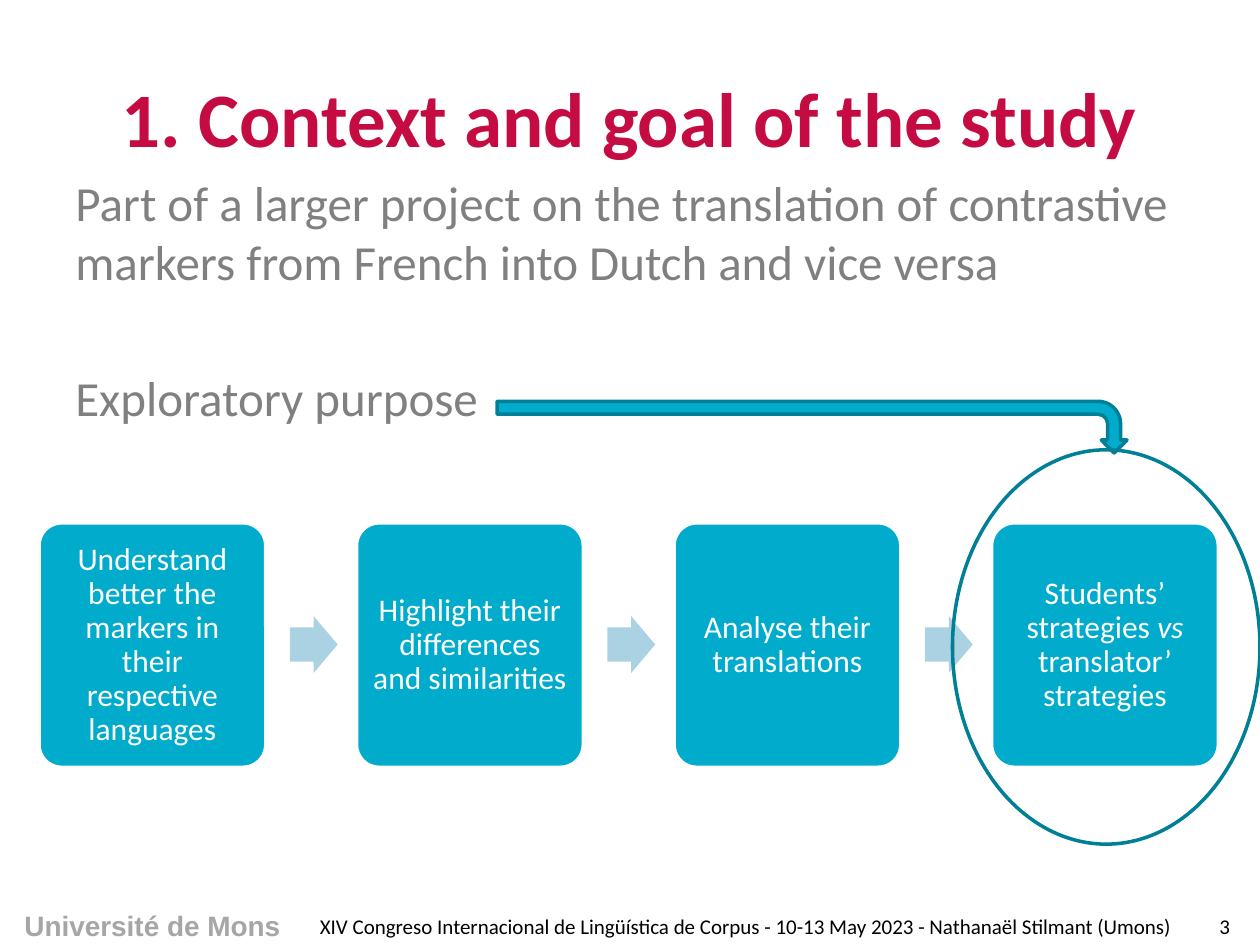
from dataclasses import dataclass

from pptx import Presentation
from pptx.dml.color import RGBColor
from pptx.enum.shapes import MSO_SHAPE
from pptx.enum.text import MSO_ANCHOR, PP_ALIGN
from pptx.util import Inches, Pt

ROUNDED = MSO_SHAPE.ROUNDED_RECTANGLE
RIGHT_ARROW = MSO_SHAPE.RIGHT_ARROW
BENT_ARROW = MSO_SHAPE.BENT_ARROW
OVAL = MSO_SHAPE.OVAL
TOP, MIDDLE = MSO_ANCHOR.TOP, MSO_ANCHOR.MIDDLE
LEFT, CENTER = PP_ALIGN.LEFT, PP_ALIGN.CENTER


@dataclass(frozen=True)
class Theme:
    font: str = "Calibri"
    brand_font: str = "Arial"
    title: str = "C40C42"
    body: str = "808080"
    brand: str = "A6A6A6"
    footer: str = "000000"
    white: str = "FFFFFF"
    step: str = "00ABCC"
    step_arrow: str = "ABD2E2"
    outline: str = "007F97"
    title_size: int = 44
    body_size: int = 28
    step_size: int = 18
    brand_size: int = 16
    footer_size: int = 12
    line_width: int = 2


THEME = Theme()


@dataclass(frozen=True)
class Box:
    left: float
    top: float
    width: float
    height: float


@dataclass(frozen=True)
class Run:
    text: str
    italic: bool = False


@dataclass(frozen=True)
class TextStyle:
    size: int
    color: str
    font: str = THEME.font
    bold: bool = False
    align: PP_ALIGN = LEFT
    anchor: MSO_ANCHOR = MIDDLE


@dataclass(frozen=True)
class Label:
    box: Box
    style: TextStyle
    paragraphs: tuple[str, ...]
    gap: int = 0


TITLE = TextStyle(THEME.title_size, THEME.title, bold=True, align=CENTER)
BODY = TextStyle(THEME.body_size, THEME.body, anchor=TOP)
BRAND = TextStyle(THEME.brand_size, THEME.brand, THEME.brand_font, True, CENTER, TOP)
FOOTER = TextStyle(THEME.footer_size, THEME.footer)
PAGE = TextStyle(THEME.footer_size, THEME.footer, align=CENTER)
STEP = TextStyle(THEME.step_size, THEME.white, align=CENTER)

LABELS = (
    Label(Box(-0.01, 7.16, 2.44, 0.37), BRAND, ("Université de Mons",)),
    Label(Box(0.5, 1.32, 9, 5.68), BODY, (
        "Part of a larger project on the translation of contrastive markers "
        "from French into Dutch and vice versa",
        "Exploratory purpose",
    ), gap=44),
    Label(Box(0.5, 0.3, 9, 1.25), TITLE, ("1. Context and goal of the study",)),
    Label(Box(9.44, 7.2, 0.56, 0.3), PAGE, ("3",)),
    Label(Box(2.44, 7.2, 7, 0.3), FOOTER, (
        "XIV Congreso Internacional de Lingüística de Corpus - 10-13 May 2023 "
        "- Nathanaël Stilmant (Umons)",
    )),
)

STEPS = (
    (Run("Understand better the markers in their respective languages"),),
    (Run("Highlight their differences and similarities"),),
    (Run("Analyse their translations"),),
    (Run("Students’ strategies "), Run("vs", italic=True), Run(" translator’ strategies")),
)
FIRST_STEP = Box(0.31, 4.15, 1.8, 1.94)
STEP_PITCH = 2.52
FIRST_ARROW = Box(2.3, 4.89, 0.38, 0.45)
STEP_INSET = 0.07


def add_run(paragraph, run: Run, style: TextStyle) -> None:
    piece = paragraph.add_run()
    piece.text = run.text
    font = piece.font
    font.name, font.size = style.font, Pt(style.size)
    font.bold, font.italic = style.bold, run.italic
    font.color.rgb = RGBColor.from_string(style.color)


def add_label(slide, label: Label) -> None:
    box = label.box
    frame = slide.shapes.add_textbox(
        Inches(box.left), Inches(box.top), Inches(box.width), Inches(box.height)
    ).text_frame
    frame.word_wrap = True
    frame.vertical_anchor = label.style.anchor
    for index, text in enumerate(label.paragraphs):
        paragraph = frame.add_paragraph() if index else frame.paragraphs[0]
        paragraph.alignment = label.style.align
        if index:
            paragraph.space_before = Pt(label.gap)
        add_run(paragraph, Run(text), label.style)


def add_figure(slide, kind: MSO_SHAPE, box: Box, fill: str | None = None,
               line: str | None = None):
    figure = slide.shapes.add_shape(
        kind, Inches(box.left), Inches(box.top), Inches(box.width), Inches(box.height)
    )
    figure.shadow.inherit = False
    if fill:
        figure.fill.solid()
        figure.fill.fore_color.rgb = RGBColor.from_string(fill)
    else:
        figure.fill.background()
    if line:
        figure.line.color.rgb = RGBColor.from_string(line)
        figure.line.width = Pt(THEME.line_width)
    else:
        figure.line.fill.background()
    return figure


def add_step(slide, box: Box, runs: tuple[Run, ...]) -> None:
    card = add_figure(slide, ROUNDED, box, THEME.step, THEME.white)
    card.adjustments[0] = 0.1
    frame = card.text_frame
    frame.word_wrap = True
    frame.vertical_anchor = STEP.anchor
    frame.margin_left = frame.margin_right = Inches(STEP_INSET)
    frame.margin_top = frame.margin_bottom = Inches(STEP_INSET)
    paragraph = frame.paragraphs[0]
    paragraph.alignment = STEP.align
    paragraph.line_spacing = 0.9
    for run in runs:
        add_run(paragraph, run, STEP)


def shifted(box: Box, index: int) -> Box:
    return Box(box.left + index * STEP_PITCH, box.top, box.width, box.height)


def add_process(slide) -> None:
    for index, runs in enumerate(STEPS):
        add_step(slide, shifted(FIRST_STEP, index), runs)
        if index < len(STEPS) - 1:
            arrow = add_figure(slide, RIGHT_ARROW, shifted(FIRST_ARROW, index), THEME.step_arrow)
            arrow.adjustments[0] = 0.6
            arrow.adjustments[1] = 0.5


def main() -> None:
    deck = Presentation()
    deck.slide_width, deck.slide_height = Inches(10), Inches(7.5)
    slide = deck.slides.add_slide(deck.slide_layouts[6])
    for label in LABELS:
        add_label(slide, label)
    add_process(slide)
    purpose_arrow = add_figure(
        slide, BENT_ARROW, Box(6.24, 0.89, 0.41, 5), THEME.step, THEME.outline
    )
    purpose_arrow.rotation = 90
    add_figure(slide, OVAL, Box(7.56, 3.57, 2.44, 3.13), line=THEME.outline)
    deck.save("out.pptx")


if __name__ == "__main__":
    main()
